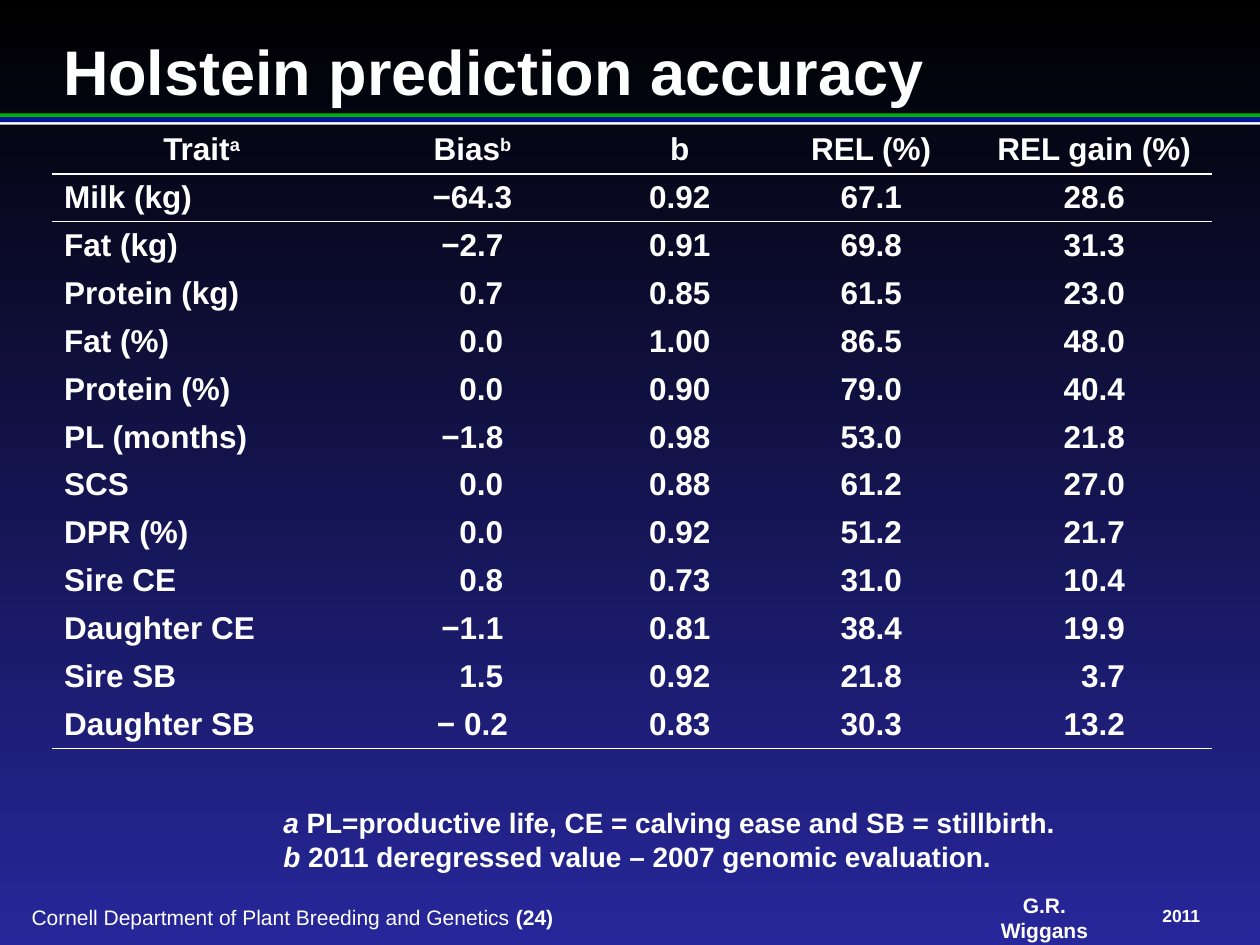
from dataclasses import dataclass
from typing import NamedTuple

from lxml import etree
from pptx import Presentation
from pptx import util as u
from pptx.dml.color import RGBColor
from pptx.enum import shapes, text
from pptx.oxml import ns

COLS, ROWS = 100, 75  # slide grid
LEFT, CENTER = text.PP_ALIGN.LEFT, text.PP_ALIGN.CENTER
TOP, MIDDLE = text.MSO_ANCHOR.TOP, text.MSO_ANCHOR.MIDDLE
PLAIN_TABLE = "{2D5ABB26-0587-4C30-8999-92F81FD0307C}"


@dataclass(frozen=True)
class Theme:
    font: str = "Arial"
    ink: str = "FFFFFF"
    sky: str = "000000"
    ground: str = "27279B"
    green: str = "01AF00"
    blue: str = "001799"
    title: int = 36
    table: int = 18
    note: int = 16
    footer: int = 12
    year: int = 10


class Area(NamedTuple):
    """A place on the slide in grid columns and rows."""
    col: float
    row: float
    cols: float
    rows: float


class Span(NamedTuple):
    text: str
    bold: bool = True
    italic: bool = False
    raised: bool = False


class Label(NamedTuple):
    area: Area
    lines: list
    size: int
    align: object = LEFT
    inset: float = 0
    wrap: bool = True


class Column(NamedTuple):
    width: float
    heading: list
    align: object = CENTER
    full: int = 0  # digits or signs expected before the decimal point


THEME = Theme()

BANDS = [
    (Area(0, 9, 100, 0.3), THEME.green),
    (Area(0, 9.6, 100, 0.3), THEME.ink),
    (Area(0, 9.3, 100, 0.4), THEME.blue),
]

LABELS = [
    Label(Area(77.6, 71.8, 10.6, 2), [[Span("G.R. Wiggans")]], THEME.footer, CENTER),
    Label(Area(90.7, 71.8, 6.1, 1.7), [[Span("2011")]], THEME.year, CENTER),
    Label(Area(2.5, 71.8, 52.2, 2),
          [[Span("Cornell Department of Plant Breeding and Genetics ", bold=False),
            Span("(24)")]], THEME.footer),
    Label(Area(21.5, 63.4, 63.5, 6.4),
          [[Span("a ", italic=True),
            Span("PL=productive life, CE = calving ease and SB = stillbirth.")],
           [Span("b ", italic=True),
            Span("2011 deregressed value – 2007 genomic evaluation.")]],
          THEME.note, inset=0.1, wrap=False),
]

TABLE_AREA = Area(4.1, 10, 92.1, 49.4)
COLUMNS = [
    Column(23.8, [Span("Trait"), Span("a", raised=True)], LEFT),
    Column(19.2, [Span("Bias"), Span("b", raised=True)], full=2),
    Column(13.7, [Span("b")]),
    Column(16.7, [Span("REL (%)")]),
    Column(18.7, [Span("REL gain (%)")], full=2),
]
TRAITS = [
    ("Milk (kg)", "−64.3", "0.92", "67.1", "28.6"),
    ("Fat (kg)", "−2.7", "0.91", "69.8", "31.3"),
    ("Protein (kg)", "0.7", "0.85", "61.5", "23.0"),
    ("Fat (%)", "0.0", "1.00", "86.5", "48.0"),
    ("Protein (%)", "0.0", "0.90", "79.0", "40.4"),
    ("PL (months)", "−1.8", "0.98", "53.0", "21.8"),
    ("SCS", "0.0", "0.88", "61.2", "27.0"),
    ("DPR (%)", "0.0", "0.92", "51.2", "21.7"),
    ("Sire CE", "0.8", "0.73", "31.0", "10.4"),
    ("Daughter CE", "−1.1", "0.81", "38.4", "19.9"),
    ("Sire SB", "1.5", "0.92", "21.8", "3.7"),
    ("Daughter SB", "− 0.2", "0.83", "30.3", "13.2"),
]


def set_all(target: object, **values: object) -> None:
    for name, value in values.items():
        setattr(target, name, value)


def place(prs, area: Area) -> tuple:
    dx, dy = prs.slide_width / COLS, prs.slide_height / ROWS
    return tuple(u.Emu(round(n * d)) for n, d in zip(area, (dx, dy, dx, dy)))


def write(p, spans: list, size: int, align: object) -> None:
    p.alignment = align
    for span in spans:
        r = p.add_run()
        r.text = span.text
        set_all(r.font, name=THEME.font, size=u.Pt(size), bold=span.bold,
                italic=span.italic)
        r.font.color.rgb = RGBColor.from_string(THEME.ink)
        if span.raised:
            r.font._element.set("baseline", "30000")


def set_frame(tf, inset: float, wrap: bool, anchor: object) -> None:
    side, edge = u.Inches(inset), u.Inches(inset / 2)
    set_all(tf, margin_left=side, margin_right=side, margin_top=edge,
            margin_bottom=edge, word_wrap=wrap, vertical_anchor=anchor,
            auto_size=text.MSO_AUTO_SIZE.NONE)


def paint_background(s) -> None:
    fill = s.background.fill
    fill.gradient()
    fill.gradient_angle = 270
    for stop, color in zip(fill.gradient_stops, (THEME.sky, THEME.ground)):
        stop.color.rgb = RGBColor.from_string(color)


def add_title(prs, s, area: Area, words: str) -> None:
    sp = s.shapes.title
    set_all(sp, **dict(zip(("left", "top", "width", "height"), place(prs, area))))
    set_frame(sp.text_frame, 0, True, TOP)
    sp.text_frame.margin_top = u.Inches(0.06)
    write(sp.text_frame.paragraphs[0], [Span(words)], THEME.title, LEFT)


def add_band(prs, s, area: Area, color: str) -> None:
    sp = s.shapes.add_shape(shapes.MSO_SHAPE.RECTANGLE, *place(prs, area))
    sp.shadow.inherit = False
    sp.fill.solid()
    sp.fill.fore_color.rgb = RGBColor.from_string(color)
    sp.line.fill.background()


def add_label(prs, s, label: Label) -> None:
    tf = s.shapes.add_textbox(*place(prs, label.area)).text_frame
    set_frame(tf, label.inset, label.wrap, MIDDLE)
    for i, spans in enumerate(label.lines):
        p = tf.add_paragraph() if i else tf.paragraphs[0]
        write(p, spans, label.size, label.align)


def rule_edge(cell, edge: str) -> None:
    """Draw a 1 pt line on one edge (lnT or lnB) of a cell."""
    ln = etree.Element(ns.qn(f"a:{edge}"), w=str(u.Pt(1)))
    fill = etree.SubElement(ln, ns.qn("a:solidFill"))
    etree.SubElement(fill, ns.qn("a:srgbClr"), val=THEME.ink)
    cell._tc.get_or_add_tcPr().insert(0, ln)


def add_trait_table(prs, s) -> None:
    count = len(TRAITS) + 1
    frame = s.shapes.add_table(count, len(COLUMNS), *place(prs, TABLE_AREA))
    table = frame.table
    set_all(table, first_row=False, horz_banding=False)
    table._tbl.tblPr.find(ns.qn("a:tableStyleId")).text = PLAIN_TABLE
    for c, column in enumerate(COLUMNS):
        table.columns[c].width = round(prs.slide_width * column.width / COLS)
        entries = [column.heading] + [[Span(row[c])] for row in TRAITS]
        for i, spans in enumerate(entries):
            cell = table.cell(i, c)
            cell.fill.background()
            set_all(cell, margin_top=u.Inches(0.04), margin_bottom=u.Inches(0.04),
                    vertical_anchor=MIDDLE)
            p = cell.text_frame.paragraphs[0]
            write(p, spans, THEME.table, column.align if i else CENTER)
            if i and len(spans[0].text.split(".")[0]) < column.full:
                p._p.get_or_add_pPr().set("marL", str(u.Inches(0.14)))
            if i in (0, count - 1):
                rule_edge(cell, "lnB")
            elif i == 1:
                rule_edge(cell, "lnT")


def main() -> None:
    prs = Presentation()
    set_all(prs, slide_width=u.Inches(10), slide_height=u.Inches(7.5))
    s = prs.slides.add_slide(prs.slide_layouts[5])
    paint_background(s)
    for area, color in BANDS:
        add_band(prs, s, area, color)
    add_title(prs, s, Area(5, 2, 90, 6), "Holstein prediction accuracy")
    add_trait_table(prs, s)
    for label in LABELS:
        add_label(prs, s, label)
    prs.save("out.pptx")


if __name__ == "__main__":
    main()
